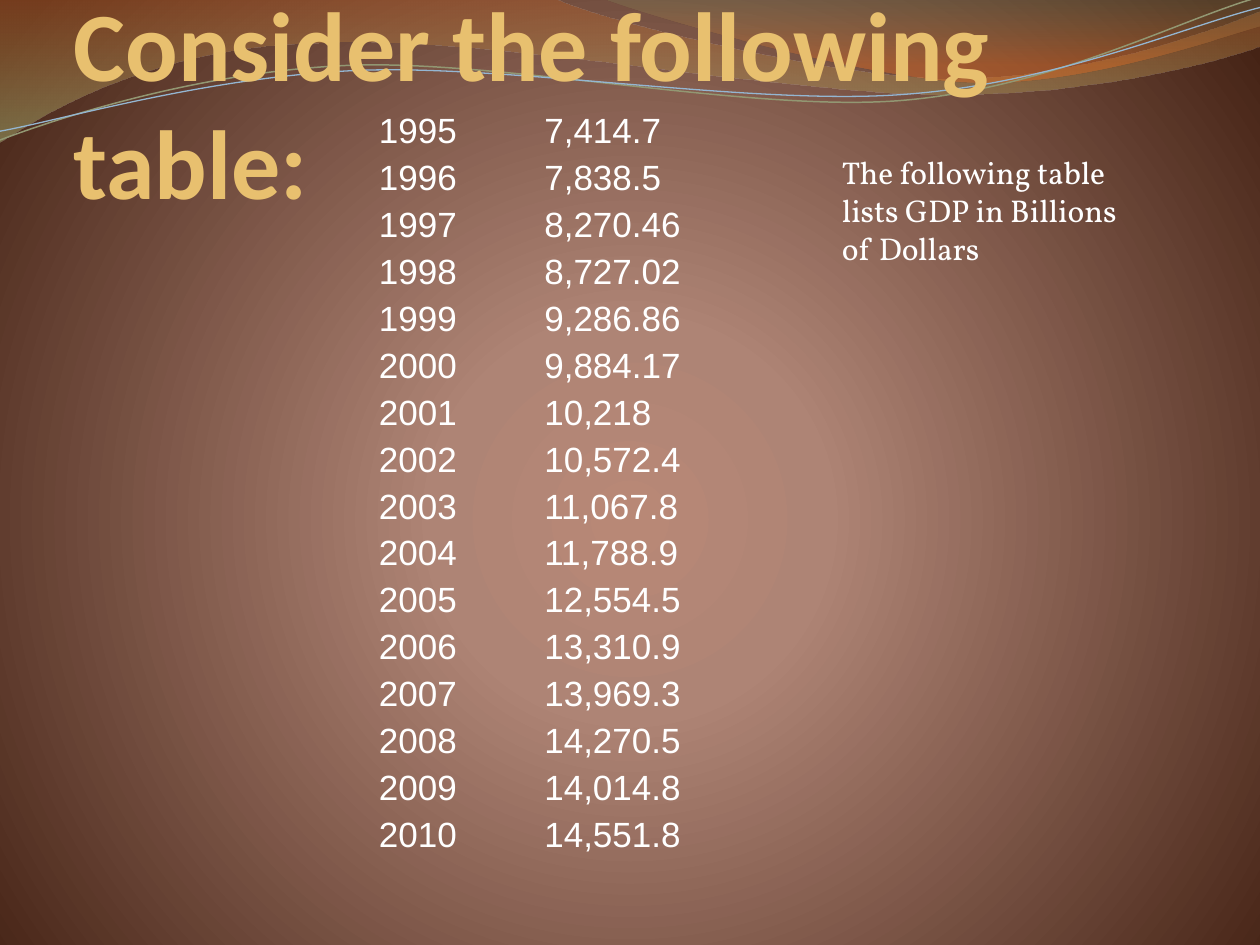
from dataclasses import dataclass
from typing import Optional

from lxml.etree import SubElement
from pptx import Presentation
from pptx.dml.color import RGBColor
from pptx.enum.text import MSO_ANCHOR, MSO_AUTO_SIZE, PP_ALIGN
from pptx.oxml.ns import qn
from pptx.util import Pt

WHITE = RGBColor(0xFF, 0xFF, 0xFF)
GOLD = RGBColor(0xE8, 0xC0, 0x6F)
RUST = RGBColor(0xAF, 0x5C, 0x29)
SAGE = RGBColor(0x9D, 0xA6, 0x6B)
OLIVE = RGBColor(0x7D, 0x83, 0x5B)
ORANGE = RGBColor(0xDD, 0x6B, 0x24)
LINE_GREEN = RGBColor(0x92, 0x97, 0x72)
LINE_BLUE = RGBColor(0x94, 0xB6, 0xD2)
CENTRE_TAN = RGBColor(0xB8, 0x88, 0x76)
MIDDLE_ROSE = RGBColor(0xAE, 0x84, 0x75)
EDGE_BROWN = RGBColor(0x45, 0x23, 0x15)

NO_STYLE_NO_GRID = "{2D5ABB26-0587-4C30-8999-92F81FD0307C}"
Point = tuple[float, float]


@dataclass(frozen=True)
class Stop:
    position: int
    color: RGBColor
    opacity: int = 100


@dataclass(frozen=True)
class Wave:
    start: Point
    segments: list[tuple[Point, ...]]
    stops: tuple[Stop, ...] = ()
    line_color: Optional[RGBColor] = None
    line_width: float = 0


WAVES = [
    Wave((0, 0), [
        ((317, -0.7),),
        ((343, 12), (478, 45), (546, 45)),
        ((614, 45), (690, 19), (720, 6.5)),
        ((720.7, 26),),
        ((708, 32), (626, 55), (537, 54)),
        ((448, 54), (275, 20), (185, 24.5)),
        ((93, 26), (33, 60), (-0.7, 81.4)),
        ((0, 0),),
    ], stops=(Stop(0, RUST, 45), Stop(100, SAGE, 55))),
    Wave((345, -0.7), [
        ((366, 8), (491, 44.6), (554, 47)),
        ((616, 49.7), (692, 23), (720, 15)),
        ((720, 0),),
        ((345, -0.7),),
    ], stops=(Stop(0, OLIVE, 30), Stop(80, ORANGE, 45))),
    Wave((0, 80), [
        ((34.6, 67), (114, 41), (199, 37.4)),
        ((284, 33.8), (427, 64), (513, 57.6)),
        ((600, 51), (675, 10.8), (718.6, -1.4)),
    ], line_color=LINE_GREEN, line_width=0.85),
    Wave((0, 75), [
        ((33.8, 69), (118, 44), (204, 40.3)),
        ((290, 36.7), (430, 60.5), (516, 54)),
        ((602, 48), (677.5, 15), (720, 4.3)),
    ], line_color=LINE_BLUE, line_width=0.75),
]

GDP_BY_YEAR = list(zip(range(1995, 2011), [
    "7,414.7", "7,838.5", "8,270.46", "8,727.02",
    "9,286.86", "9,884.17", "10,218", "10,572.4",
    "11,067.8", "11,788.9", "12,554.5", "13,310.9",
    "13,969.3", "14,270.5", "14,014.8", "14,551.8",
]))


def paint_gradient(properties, stops: tuple[Stop, ...], radial: bool = False) -> None:
    solid = properties.find(qn("a:solidFill"))
    gradient = SubElement(properties, qn("a:gradFill"), rotWithShape="1")
    properties.replace(solid, gradient)
    stop_list = SubElement(gradient, qn("a:gsLst"))
    for stop in stops:
        entry = SubElement(stop_list, qn("a:gs"), pos=str(stop.position * 1000))
        color = SubElement(entry, qn("a:srgbClr"), val=str(stop.color))
        if stop.opacity < 100:
            SubElement(color, qn("a:alpha"), val=str(stop.opacity * 1000))
    if radial:
        focus = SubElement(gradient, qn("a:path"), path="circle")
        SubElement(focus, qn("a:fillToRect"), l="10000", t="110000", r="10000", b="100000")
    else:
        SubElement(gradient, qn("a:lin"), ang="5400000", scaled="1")


def bend_segments(shape, segments: list[tuple[Point, ...]]) -> None:
    straight_lines = list(shape.element.iter(qn("a:lnTo")))
    for straight_line, segment in zip(straight_lines, segments):
        if len(segment) == 1:
            continue
        outline = straight_line.getparent()
        curve = SubElement(outline, qn("a:cubicBezTo"))
        outline.replace(straight_line, curve)
        for x, y in segment:
            SubElement(curve, qn("a:pt"), x=str(Pt(x) - shape.left), y=str(Pt(y) - shape.top))


def draw_wave(slide, wave: Wave) -> None:
    builder = slide.shapes.build_freeform(Pt(wave.start[0]), Pt(wave.start[1]))
    anchors = [(Pt(segment[-1][0]), Pt(segment[-1][1])) for segment in wave.segments]
    builder.add_line_segments(anchors, close=bool(wave.stops))
    shape = builder.convert_to_shape()
    bend_segments(shape, wave.segments)
    shape.shadow.inherit = False
    if wave.stops:
        shape.fill.solid()
        paint_gradient(shape.element.spPr, wave.stops)
        shape.line.fill.background()
    else:
        shape.fill.background()
        shape.line.color.rgb = wave.line_color
        shape.line.width = Pt(wave.line_width)


def format_text(paragraph, font_name: str, size: int, color: RGBColor, bold: bool = False) -> None:
    paragraph.alignment = PP_ALIGN.LEFT
    for run in paragraph.runs:
        run.font.name = font_name
        run.font.size = Pt(size)
        run.font.color.rgb = color
        run.font.bold = bold


def place_title(slide) -> None:
    title = slide.shapes.title
    slide.shapes.element.append(title.element)
    title.left, title.top, title.width, title.height = Pt(42), Pt(18), Pt(612), Pt(107)
    frame = title.text_frame
    frame.text = "Consider the following table:"
    frame.word_wrap = True
    frame.auto_size = MSO_AUTO_SIZE.NONE
    frame.vertical_anchor = MSO_ANCHOR.BOTTOM
    frame.margin_left = frame.margin_right = frame.margin_top = frame.margin_bottom = 0
    format_text(frame.paragraphs[0], "Calibri", 56, GOLD, bold=True)


def draw_gdp_table(slide) -> None:
    frame = slide.shapes.add_table(
        len(GDP_BY_YEAR), 3, Pt(216), Pt(60), Pt(283.5), Pt(460))
    table = frame.table
    table.first_row = table.horz_banding = False
    frame.element.find(".//" + qn("a:tableStyleId")).text = NO_STYLE_NO_GRID
    for row, record in zip(table.rows, GDP_BY_YEAR):
        row.height = Pt(20)
        for cell in row.cells:
            cell.fill.background()
            cell.vertical_anchor = MSO_ANCHOR.MIDDLE
            cell.margin_left = cell.margin_right = Pt(0.58)
            cell.margin_top = cell.margin_bottom = Pt(0.58)
        for cell, value in zip(row.cells, record):
            paragraph = cell.text_frame.paragraphs[0]
            paragraph.text = str(value)
            paragraph.line_spacing = 1.15
            format_text(paragraph, "Arial", 20, WHITE)
    frame.height = Pt(460)


def draw_caption(slide) -> None:
    frame = slide.shapes.add_textbox(Pt(474), Pt(84), Pt(180), Pt(73)).text_frame
    frame.word_wrap = True
    frame.auto_size = MSO_AUTO_SIZE.SHAPE_TO_FIT_TEXT
    frame.text = "The following table lists GDP in Billions of Dollars"
    format_text(frame.paragraphs[0], "Vollkorn", 18, WHITE)


def main() -> None:
    presentation = Presentation()
    presentation.slide_width, presentation.slide_height = Pt(720), Pt(540)
    slide = presentation.slides.add_slide(presentation.slide_layouts[5])
    slide.background.fill.solid()
    paint_gradient(
        slide.element.find(".//" + qn("p:bgPr")),
        (Stop(0, CENTRE_TAN), Stop(25, MIDDLE_ROSE), Stop(100, EDGE_BROWN)),
        radial=True)
    for wave in WAVES:
        draw_wave(slide, wave)
    place_title(slide)
    draw_gdp_table(slide)
    draw_caption(slide)
    presentation.save("out.pptx")


if __name__ == "__main__":
    main()
